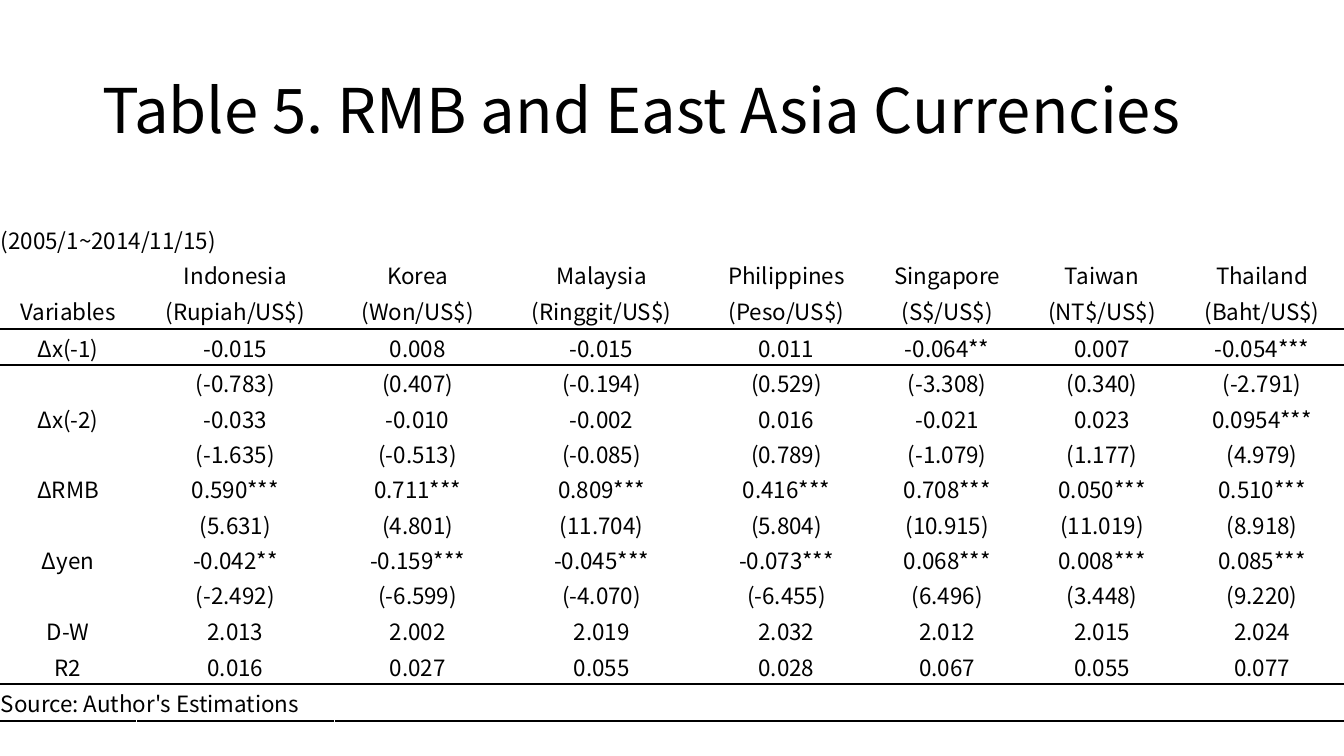
from lxml import etree
from pptx import Presentation
from pptx.dml.color import RGBColor
from pptx.enum.text import MSO_ANCHOR, PP_ALIGN
from pptx.oxml.ns import qn
from pptx.util import Cm, Pt

BLACK = RGBColor(0, 0, 0)
FONT = "Noto Sans CJK KR"
MIDDLE = MSO_ANCHOR.MIDDLE
LEFT, CENTER = PP_ALIGN.LEFT, PP_ALIGN.CENTER

COLUMN_WIDTHS = [3.43, 5, 4.19, 5.08, 4.24, 3.86, 3.94, 4.13]
ROW_HEIGHT, TALL_ROW_HEIGHT = 0.89, 0.92
HEADER_ROW, LAST_ROW = 3, 13
PERIOD_ROW, SOURCE_ROW = 1, 14
TALL_ROWS = {HEADER_ROW, HEADER_ROW + 1, LAST_ROW, SOURCE_ROW}
MERGED_COLUMNS = {PERIOD_ROW: 2, SOURCE_ROW: 3}
RULES = {HEADER_ROW: "a:lnB", HEADER_ROW + 1: "a:lnT",
         LAST_ROW: "a:lnB", SOURCE_ROW: "a:lnT"}

ROWS = [
    [],
    ["(2005/1~2014/11/15)"],
    ["", "Indonesia", "Korea", "Malaysia", "Philippines", "Singapore", "Taiwan", "Thailand"],
    ["Variables", "(Rupiah/US$)", "(Won/US$)", "(Ringgit/US$)", "(Peso/US$)", "(S$/US$)",
     "(NT$/US$)", "(Baht/US$)"],
    ["Δx(-1)", "-0.015", "0.008", "-0.015", "0.011", "-0.064**", "0.007", "-0.054***"],
    ["", "(-0.783)", "(0.407)", "(-0.194)", "(0.529)", "(-3.308)", "(0.340)", "(-2.791)"],
    ["Δx(-2)", "-0.033", "-0.010", "-0.002", "0.016", "-0.021", "0.023", "0.0954***"],
    ["", "(-1.635)", "(-0.513)", "(-0.085)", "(0.789)", "(-1.079)", "(1.177)", "(4.979)"],
    ["ΔRMB", "0.590***", "0.711***", "0.809***", "0.416***", "0.708***", "0.050***", "0.510***"],
    ["", "(5.631)", "(4.801)", "(11.704)", "(5.804)", "(10.915)", "(11.019)", "(8.918)"],
    ["Δyen", "-0.042**", "-0.159***", "-0.045***", "-0.073***", "0.068***", "0.008***", "0.085***"],
    ["", "(-2.492)", "(-6.599)", "(-4.070)", "(-6.455)", "(6.496)", "(3.448)", "(9.220)"],
    ["D-W", "2.013", "2.002", "2.019", "2.032", "2.012", "2.015", "2.024"],
    ["R2", "0.016", "0.027", "0.055", "0.028", "0.067", "0.055", "0.077"],
    ["Source: Author's Estimations"],
    [],
]


def format_paragraph(paragraph, size, alignment):
    """Set the alignment, font, size and colour of a paragraph's runs."""
    paragraph.alignment = alignment
    for run in paragraph.runs:
        run.font.name = FONT
        run.font.size = Pt(size)
        run.font.color.rgb = BLACK


def add_rule(cell, side):
    """Draw a black rule along one side of a table cell."""
    line = etree.Element(qn(side), w=str(Pt(1.5)))
    fill = etree.SubElement(line, qn("a:solidFill"))
    etree.SubElement(fill, qn("a:srgbClr"), val=str(BLACK))
    cell._tc.get_or_add_tcPr().insert(0, line)


def add_title(slide, left, top, width, height):
    """Place the slide title in the given box."""
    text_frame = slide.shapes.add_textbox(left, top, width, height).text_frame
    text_frame.word_wrap = True
    text_frame.vertical_anchor = MIDDLE
    text_frame.text = "Table 5. RMB and East Asia Currencies"
    paragraph = text_frame.paragraphs[0]
    paragraph.line_spacing = 0.9
    format_paragraph(paragraph, 44, LEFT)


def fill_cell(cell, text, alignment):
    """Write one plain table cell."""
    cell.fill.background()
    cell.vertical_anchor = MIDDLE
    cell.margin_left = cell.margin_right = cell.margin_top = Cm(0.02)
    cell.margin_bottom = 0
    cell.text = text
    format_paragraph(cell.text_frame.paragraphs[0], 16, alignment)


def add_estimates_table(slide, left, top, width, height):
    """Place the table of estimates in the given box."""
    frame = slide.shapes.add_table(len(ROWS), len(COLUMN_WIDTHS), left, top, width, height)
    table = frame.table
    table.first_row = table.horz_banding = False
    for column, column_width in zip(table.columns, COLUMN_WIDTHS):
        column.width = Cm(column_width)
    for row_index, texts in enumerate(ROWS):
        tall = row_index in TALL_ROWS
        table.rows[row_index].height = Cm(TALL_ROW_HEIGHT if tall else ROW_HEIGHT)
        alignment = LEFT if row_index in MERGED_COLUMNS else CENTER
        for column_index in range(len(COLUMN_WIDTHS)):
            cell = table.cell(row_index, column_index)
            text = texts[column_index] if column_index < len(texts) else ""
            fill_cell(cell, text, alignment)
            if row_index in RULES:
                add_rule(cell, RULES[row_index])
    for row_index, count in MERGED_COLUMNS.items():
        table.cell(row_index, 0).merge(table.cell(row_index, count - 1))


def main():
    """Build and save the presentation."""
    presentation = Presentation()
    presentation.slide_width = Cm(33.87)
    presentation.slide_height = Cm(19.05)
    slide = presentation.slides.add_slide(presentation.slide_layouts[6])
    add_title(slide, Cm(2.33), Cm(1.01), Cm(29.21), Cm(3.68))
    add_estimates_table(slide, Cm(0), Cm(4.69), presentation.slide_width, Cm(14.36))
    presentation.save("out.pptx")


if __name__ == "__main__":
    main()
